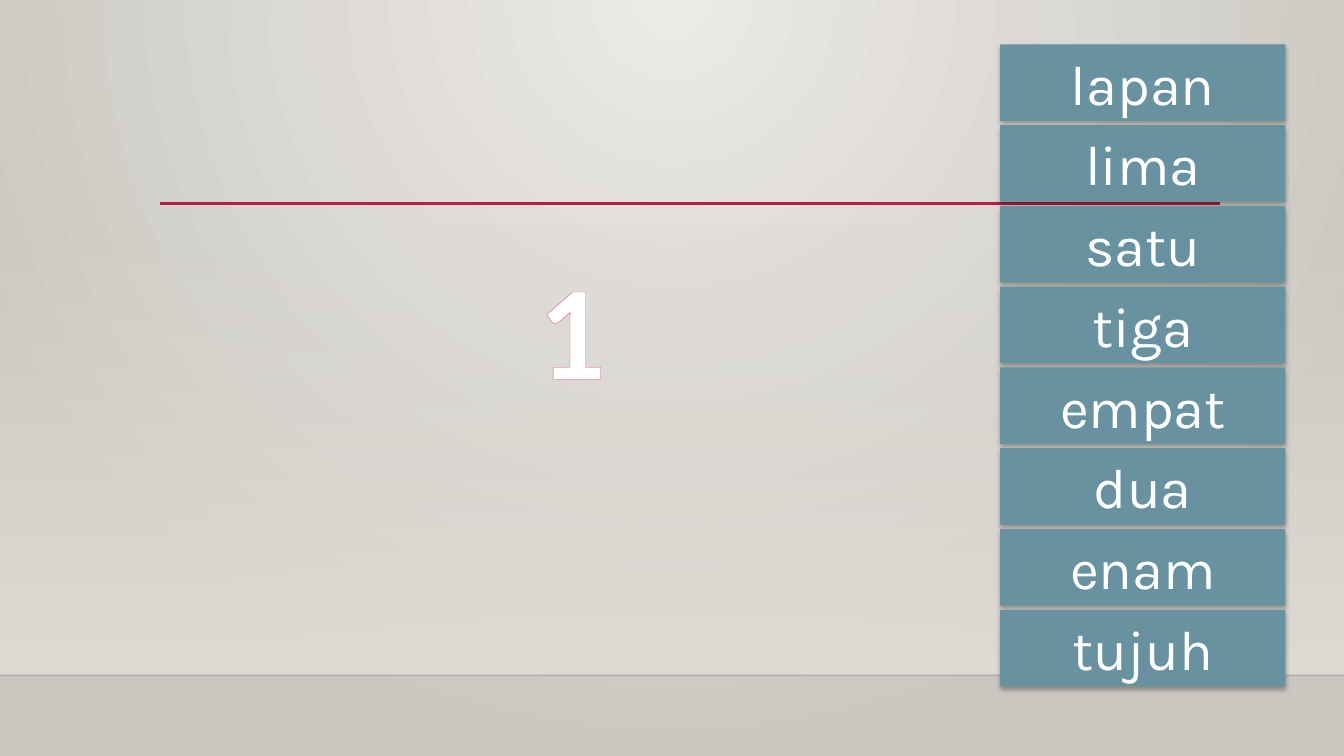
from pptx import Presentation
from pptx.dml.color import RGBColor
from pptx.enum.shapes import MSO_CONNECTOR, MSO_SHAPE
from pptx.enum.text import MSO_ANCHOR, MSO_AUTO_SIZE, PP_ALIGN
from pptx.oxml import parse_xml
from pptx.oxml.ns import nsdecls, qn
from pptx.util import Inches, Pt

RECTANGLE = MSO_SHAPE.RECTANGLE
STRAIGHT = MSO_CONNECTOR.STRAIGHT
MIDDLE = MSO_ANCHOR.MIDDLE
FIT_SHAPE = MSO_AUTO_SIZE.SHAPE_TO_FIT_TEXT
CENTER = PP_ALIGN.CENTER

COLORS = {
    "glow": "ECEAE7",
    "wall": "CAC7C1",
    "haze": "DFDBD5",
    "floor_edge": "000001",
    "rule": "B71E42",
    "card": "6892A0",
    "white": "FFFFFF",
    "numeral_edge": "DE478E",
    "shadow": "000000",
}
WORDS = ["lapan", "lima", "satu", "tiga", "empat", "dua", "enam", "tujuh"]
SLIDE_WIDTH, SLIDE_HEIGHT = 13.33, 7.5
FLOOR_TOP = 6.7


def rgb(name):
    return RGBColor.from_string(COLORS[name])


def drawing(tag, attributes="", children=""):
    return parse_xml(f'<a:{tag} {nsdecls("a")} {attributes}>{children}</a:{tag}>')


def set_alpha(color_element, percent):
    color_element.append(drawing("alpha", f'val="{percent * 1000}"'))


def color_stops(fill, names):
    fill.gradient()
    for stop, name in zip(fill.gradient_stops, names):
        stop.color.rgb = rgb(name)


def add_rule(slide, left, top, width, color, weight):
    rule = slide.shapes.add_connector(
        STRAIGHT, Inches(left), Inches(top), Inches(left + width), Inches(top))
    rule.line.color.rgb = rgb(color)
    rule.line.width = Pt(weight)
    rule._element.spPr.append(drawing("effectLst"))
    return rule


def paint_background(slide):
    color_stops(slide.background.fill, ["glow", "wall"])
    gradient = next(slide._element.iter(qn("a:gradFill")))
    linear = gradient.find(qn("a:lin"))
    radial = drawing("path", 'path="circle"',
                     '<a:fillToRect l="43000" t="0" r="43000" b="100000"/>')
    gradient.replace(linear, radial)


def add_room(slide, left, top, width, height):
    haze = slide.shapes.add_shape(
        RECTANGLE, Inches(left), Inches(top), Inches(width), Inches(height))
    haze.shadow.inherit = False
    haze.line.fill.background()
    color_stops(haze.fill, ["haze", "haze"])
    haze.fill.gradient_angle = 270
    set_alpha(next(haze._element.spPr.iter(qn("a:srgbClr"))), 0)

    floor_edge = add_rule(slide, left, top + height, width, "floor_edge", 1)
    set_alpha(next(floor_edge._element.spPr.iter(qn("a:srgbClr"))), 20)


def add_word_card(slide, word, left, top, width, height):
    card = slide.shapes.add_shape(
        RECTANGLE, Inches(left), Inches(top), Inches(width), Inches(height))
    card.fill.solid()
    card.fill.fore_color.rgb = rgb("card")
    card.line.fill.background()
    card.shadow.inherit = False
    effects = card._element.spPr.find(qn("a:effectLst"))
    effects.append(drawing(
        "outerShdw",
        f'blurRad="{Pt(3.5)}" dist="{Pt(2.2)}" dir="5400000" rotWithShape="0"',
        f'<a:srgbClr val="{COLORS["shadow"]}"><a:alpha val="32000"/></a:srgbClr>'))
    card.text_frame.text = word
    card.text_frame.vertical_anchor = MIDDLE
    paragraph = card.text_frame.paragraphs[0]
    paragraph.alignment = CENTER
    font = paragraph.runs[0].font
    font.name = "Karla"
    font.size = Pt(40)
    font.color.rgb = rgb("white")


def add_word_column(slide, left, top, width, height):
    card_height = 0.76
    pitch = (height - card_height) / (len(WORDS) - 1)
    for index, word in enumerate(WORDS):
        add_word_card(slide, word, left, top + index * pitch, width, card_height)


def add_numeral(slide, left, top, width, height):
    numeral = slide.shapes.add_textbox(
        Inches(left), Inches(top), Inches(width), Inches(height))
    frame = numeral.text_frame
    frame.text = "1"
    frame.word_wrap = False
    frame.auto_size = FIT_SHAPE
    paragraph = frame.paragraphs[0]
    paragraph.alignment = CENTER
    run = paragraph.runs[0]
    run.font.name = "Calibri"
    run.font.size = Pt(96)
    run.font.bold = True
    run.font.color.rgb = rgb("white")
    edge = drawing(
        "ln", f'w="{Pt(0.52)}"',
        f'<a:solidFill><a:srgbClr val="{COLORS["numeral_edge"]}"/></a:solidFill>')
    run._r.get_or_add_rPr().insert(0, edge)


def main():
    presentation = Presentation()
    presentation.slide_width = Inches(SLIDE_WIDTH)
    presentation.slide_height = Inches(SLIDE_HEIGHT)
    slide = presentation.slides.add_slide(presentation.slide_layouts[6])
    paint_background(slide)
    add_room(slide, 0, 2.21, SLIDE_WIDTH, FLOOR_TOP - 2.21)
    add_rule(slide, 1.59, 2.02, 10.51, "rule", 2.5)
    add_word_column(slide, 9.92, 0.44, 2.83, 6.37)
    add_numeral(slide, 5.23, 2.38, 0.88, 1.72)
    presentation.save("out.pptx")


if __name__ == "__main__":
    main()
